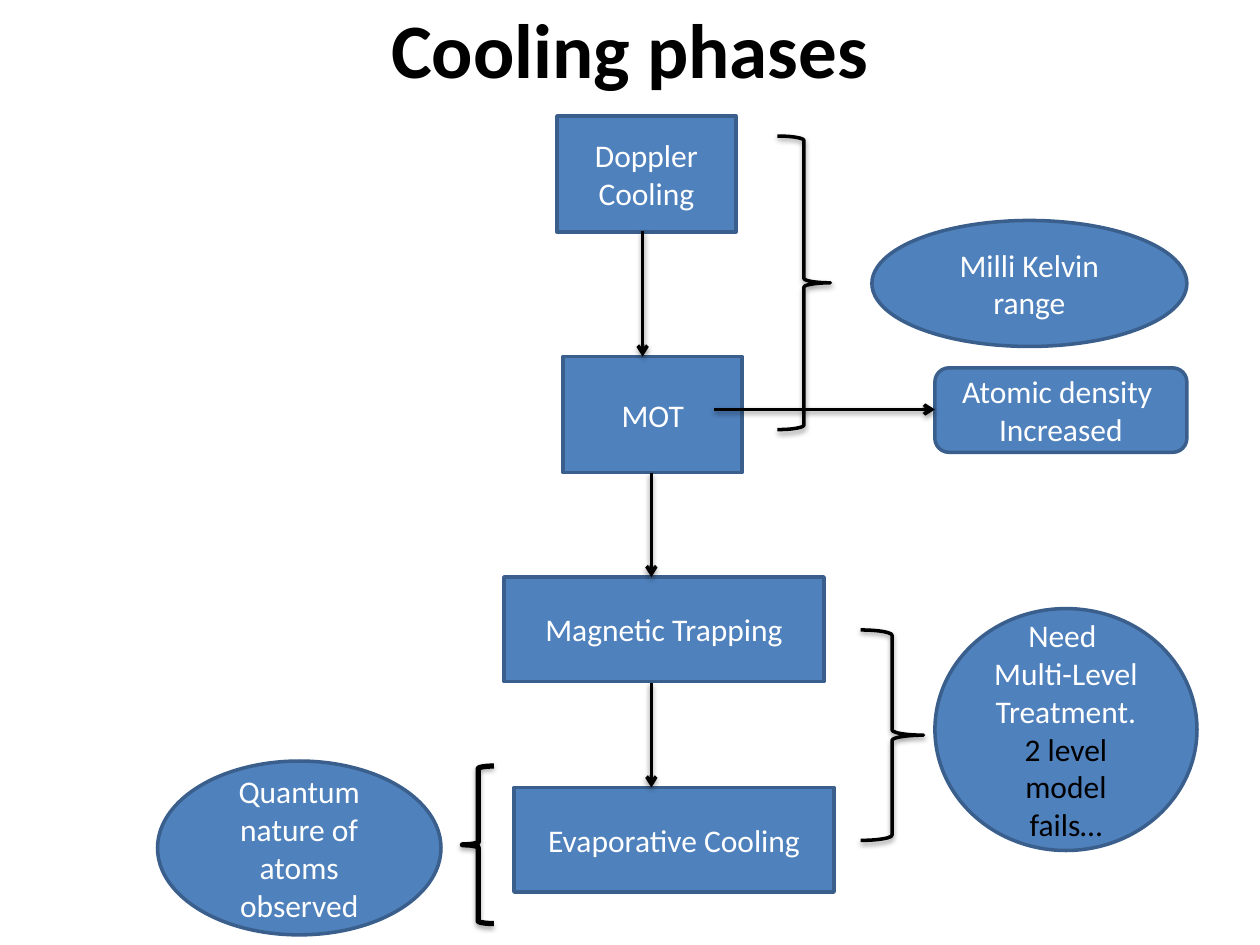
import dataclasses
import typing

import lxml.etree
import pptx
import pptx.dml.color
import pptx.enum.shapes
import pptx.enum.text
import pptx.oxml.ns
import pptx.util

Inches = pptx.util.Inches
Pt = pptx.util.Pt
ShapeType = pptx.enum.shapes.MSO_SHAPE

COLORS = {"fill": "4F81BD", "outline": "3A5F8C", "black": "000000", "white": "FFFFFF"}
FONT = "Calibri"


@dataclasses.dataclass
class Node:
    kind: typing.Any
    left: float
    top: float
    width: float
    height: float
    text: str
    dark_paragraphs: tuple = ()


@dataclasses.dataclass
class Brace:
    kind: typing.Any
    left: float
    top: float
    width: float
    height: float
    weight: float = 2
    shadow_opacity: int = 38


@dataclasses.dataclass
class Arrow:
    start: tuple
    end: tuple


NODES = [
    Node(ShapeType.RECTANGLE, 4.42, 0.92, 1.42, 0.92, "Doppler\nCooling"),
    Node(ShapeType.RECTANGLE, 4.47, 2.83, 1.42, 0.92, "MOT"),
    Node(ShapeType.RECTANGLE, 4, 4.58, 2.54, 0.83, "Magnetic Trapping"),
    Node(ShapeType.RECTANGLE, 4.08, 6.25, 2.54, 0.83, "Evaporative Cooling"),
    Node(ShapeType.OVAL, 6.92, 1.75, 2.5, 1, "Milli Kelvin range"),
    Node(ShapeType.ROUNDED_RECTANGLE, 7.42, 2.92, 2, 0.67, "Atomic density \nIncreased"),
    Node(ShapeType.OVAL, 7.42, 4.83, 2.08, 1.92,
         "Need \nMulti-Level\nTreatment.\n2 level model fails…", (3,)),
    Node(ShapeType.OVAL, 1.25, 6.04, 2.25, 1.38, "Quantum nature of atoms observed"),
]

BRACES = [
    Brace(ShapeType.RIGHT_BRACE, 6.17, 1.08, 0.42, 2.33),
    Brace(ShapeType.RIGHT_BRACE, 6.83, 5, 0.5, 1.67),
    Brace(ShapeType.LEFT_BRACE, 3.67, 6.08, 0.25, 1.25, 3, 35),
]

ARROWS = [
    Arrow((5.1, 1.83), (5.1, 2.83)),
    Arrow((5.67, 3.25), (7.42, 3.25)),
    Arrow((5.17, 3.75), (5.17, 4.58)),
    Arrow((5.17, 5.42), (5.17, 6.25)),
]


def color(name: str) -> pptx.dml.color.RGBColor:
    return pptx.dml.color.RGBColor.from_string(COLORS[name])


def add_child(parent, tag: str, **attributes: str):
    child = lxml.etree.SubElement(parent, pptx.oxml.ns.qn(tag))
    for name, value in attributes.items():
        child.set(name, value)
    return child


def set_line(shape, name: str, weight: float) -> None:
    shape.line.color.rgb = color(name)
    shape.line.width = Pt(weight)


def add_shadow(effects, opacity: int) -> None:
    shadow = add_child(effects, "a:outerShdw", blurRad=str(Pt(3.1)), dist=str(Pt(1.6)),
                       dir="5400000", rotWithShape="0")
    shade = add_child(shadow, "a:srgbClr", val=COLORS["black"])
    add_child(shade, "a:alpha", val=str(opacity * 1000))


def add_preset(slide, item: Node | Brace):
    shape = slide.shapes.add_shape(item.kind, Inches(item.left), Inches(item.top),
                                   Inches(item.width), Inches(item.height))
    shape.shadow.inherit = False
    return shape


def format_paragraph(paragraph, size: float, name: str, bold: bool = False) -> None:
    paragraph.alignment = pptx.enum.text.PP_ALIGN.CENTER
    for run in paragraph.runs:
        run.font.name = FONT
        run.font.size = Pt(size)
        run.font.bold = bold
        run.font.color.rgb = color(name)


def draw_title(slide, text: str) -> None:
    title = slide.shapes.title
    title.left, title.top = Inches(0.5), Inches(-0.25)
    title.width, title.height = Inches(9), Inches(1.25)
    title.text_frame.text = text
    title.text_frame.vertical_anchor = pptx.enum.text.MSO_ANCHOR.MIDDLE
    format_paragraph(title.text_frame.paragraphs[0], 44, "black", True)


def draw_node(slide, node: Node) -> None:
    shape = add_preset(slide, node)
    shape.fill.solid()
    shape.fill.fore_color.rgb = color("fill")
    set_line(shape, "outline", 2)
    frame = shape.text_frame
    frame.text = node.text
    frame.word_wrap = True
    frame.vertical_anchor = pptx.enum.text.MSO_ANCHOR.MIDDLE
    for index, paragraph in enumerate(frame.paragraphs):
        format_paragraph(paragraph, 18, "black" if index in node.dark_paragraphs else "white")


def draw_brace(slide, brace: Brace) -> None:
    shape = add_preset(slide, brace)
    shape.fill.background()
    set_line(shape, "black", brace.weight)
    effects = shape.element.spPr.find(pptx.oxml.ns.qn("a:effectLst"))
    add_shadow(effects, brace.shadow_opacity)


def draw_arrow(slide, arrow: Arrow) -> None:
    connector = slide.shapes.add_connector(
        pptx.enum.shapes.MSO_CONNECTOR.STRAIGHT,
        *(Inches(value) for value in arrow.start + arrow.end))
    set_line(connector, "black", 2)
    add_child(connector.line._get_or_add_ln(), "a:tailEnd", type="arrow")
    add_shadow(add_child(connector.element.spPr, "a:effectLst"), 38)


def main() -> None:
    presentation = pptx.Presentation()
    presentation.slide_width = Inches(10)
    presentation.slide_height = Inches(7.5)
    slide = presentation.slides.add_slide(presentation.slide_layouts[5])
    draw_title(slide, "Cooling phases")
    for node in NODES:
        draw_node(slide, node)
    for brace in BRACES:
        draw_brace(slide, brace)
    for arrow in ARROWS:
        draw_arrow(slide, arrow)
    presentation.save("out.pptx")


if __name__ == "__main__":
    main()
